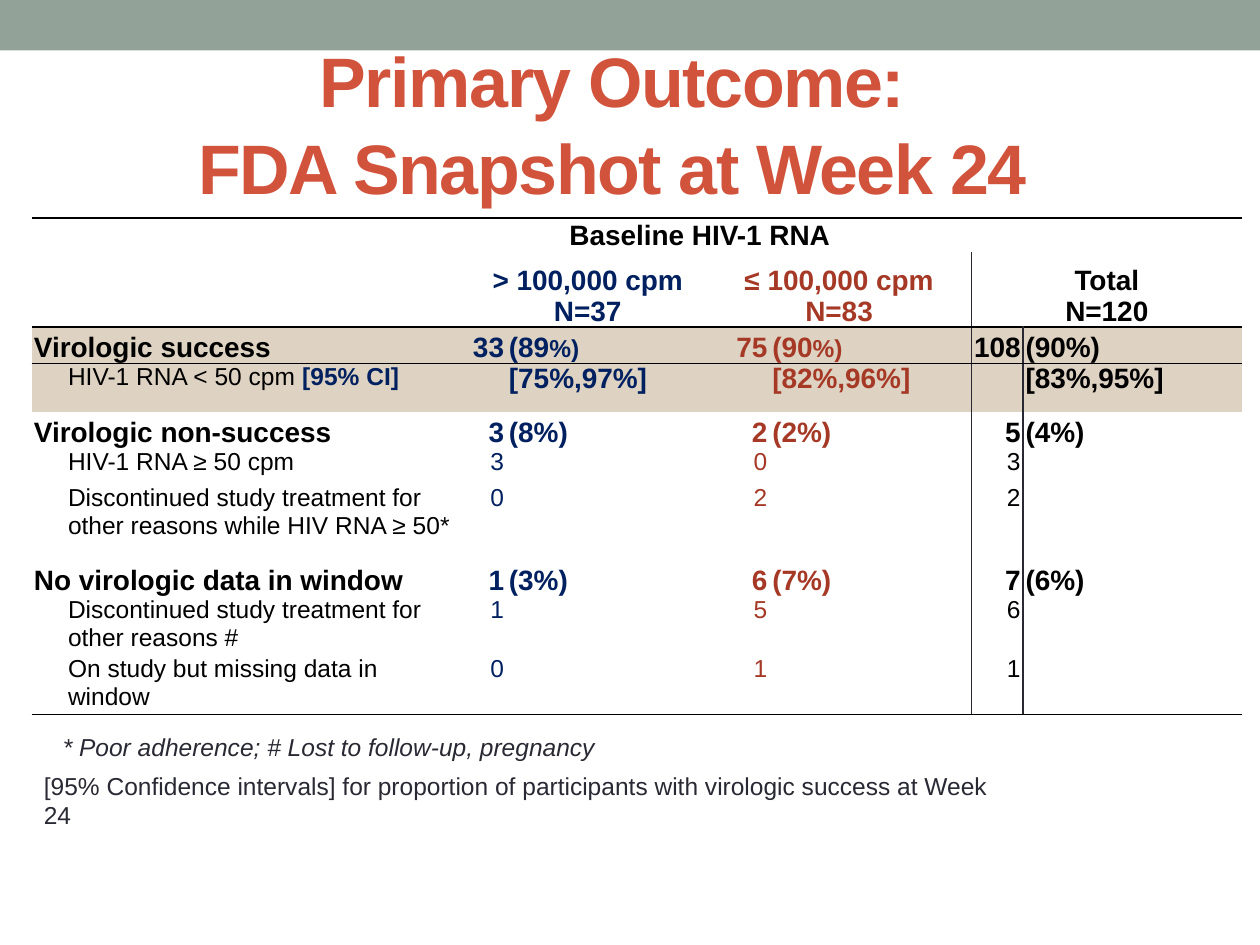
from lxml.etree import SubElement
from pptx import Presentation
from pptx.dml.color import RGBColor
from pptx.enum.shapes import MSO_SHAPE as Shape
from pptx.enum.text import MSO_ANCHOR as Anchor, PP_ALIGN as Align
from pptx.oxml.ns import qn
from pptx.util import Inches, Pt

THEME = {
    "font": "Arial",
    "bar": "93A299", "title": "D2533C", "note": "292934", "rule": "000000", "divider": "292934",
    "plain": "FFFFFF", "shade": "DED2C2", "black": "000000", "high": "002060", "low": "A53926",
    "title_size": 40, "head_size": 16, "body_size": 14,
}
TITLE = "Primary Outcome:\vFDA Snapshot at Week 24"
SPANNER = "Baseline HIV-1 RNA"
GROUPS = [
    ("high", "> 100,000 cpm\vN=37"),
    ("low", "≤ 100,000 cpm\vN=83"),
    ("black", "Total\vN=120"),
]
ROWS = [
    ("main", "Virologic success", [("33", "(89", "%)"), ("75", "(90", "%)"), ("108", "(90%)")]),
    ("interval", "HIV-1 RNA < 50 cpm ", [("", "[75%,97%]"), ("", "[82%,96%]"), ("", "[83%,95%]")]),
    ("main", "Virologic non-success", [("3", "(8%)"), ("2", "(2%)"), ("5", "(4%)")]),
    ("detail", "HIV-1 RNA ≥ 50 cpm", [("3",), ("0",), ("3",)]),
    ("detail", "Discontinued study treatment for other reasons while HIV RNA ≥ 50*",
     [("0",), ("2",), ("2",)]),
    ("main", "No virologic data in window", [("1", "(3%)"), ("6", "(7%)"), ("7", "(6%)")]),
    ("detail", "Discontinued study treatment for other reasons #", [("1",), ("5",), ("6",)]),
    ("detail", "On study but missing data in window", [("0",), ("1",), ("1",)]),
]
NOTES = [
    ((0.25, 6.07, 7.96, 0.34),
     "[95% Confidence intervals] for proportion of participants with virologic success at Week 24",
     False),
    ((0.4, 5.76, 8.17, 0.34), "* Poor adherence; # Lost to follow-up, pregnancy", True),
]
COLUMN_WIDTHS = [3.47, 0.3, 1.59, 0.5, 1.6, 0.41, 1.74]
ROW_HEIGHTS = [0.23, 0.6, 0.29, 0.38, 0.29, 0.29, 0.6, 0.29, 0.29, 0.29]
SHADED_ROWS = (2, 3)
DIVIDER_COLUMN = 5
NO_STYLE = "{2D5ABB26-0587-4C30-8999-92F81FD0307C}"


def add_span(para, text, color, size, **format_values):
    para.add_run()
    span = para.runs[-1]
    if "\v" in text:
        first, text = text.split("\v")
        span.text = first
        para.add_line_break()
        add_span(para, text, color, size, **format_values)
    else:
        span.text = text
    values = {"name": THEME["font"], "size": Pt(THEME[size]), **format_values}
    for name, value in values.items():
        setattr(span.font, name, value)
    span.font.color.rgb = RGBColor.from_string(THEME[color])


def add_box(page, place):
    box = page.shapes.add_textbox(*map(Inches, place))
    box.text_frame.word_wrap = True
    return box.text_frame


def add_borders(cell, row, column):
    sides = {}
    if row >= 1 and column == DIVIDER_COLUMN:
        sides["lnL"] = "divider"
    merged_edge = row == 1 and column == DIVIDER_COLUMN - 2
    if row >= 1 and (column == DIVIDER_COLUMN - 1 or merged_edge):
        sides["lnR"] = "divider"
    if row in (0, 2):
        sides["lnT"] = "rule"
    if row in (1, len(ROW_HEIGHTS) - 1):
        sides["lnB"] = "rule"
    properties = cell._tc.get_or_add_tcPr()
    for side, color in sides.items():
        line = SubElement(properties, qn("a:" + side), w=str(Pt(1)))
        fill = SubElement(line, qn("a:solidFill"))
        SubElement(fill, qn("a:srgbClr"), val=THEME[color])


def prepare_cell(cell, row, column):
    bottom = row < 2 or ROWS[row - 2][0] == "main"
    margin = Inches(0.02)
    values = {"margin_left": margin, "margin_right": margin, "margin_top": 0, "margin_bottom": 0,
              "vertical_anchor": Anchor.BOTTOM if bottom else Anchor.TOP}
    for name, value in values.items():
        setattr(cell, name, value)
    add_borders(cell, row, column)
    cell.fill.solid()
    shade = "shade" if row in SHADED_ROWS else "plain"
    cell.fill.fore_color.rgb = RGBColor.from_string(THEME[shade])
    end = cell.text_frame.paragraphs[0]._p.get_or_add_endParaRPr()
    end.set("sz", str(THEME["body_size"] * 100))


def indent(para, width):
    para._p.get_or_add_pPr().set("marL", str(Inches(width)))


def fill_headers(table):
    table.cell(0, 1).merge(table.cell(0, 6))
    para = table.cell(0, 1).text_frame.paragraphs[0]
    indent(para, 0.78)
    add_span(para, SPANNER, "black", "head_size", bold=True)
    for index, (color, label) in enumerate(GROUPS):
        column = 1 + 2 * index
        table.cell(1, column).merge(table.cell(1, column + 1))
        para = table.cell(1, column).text_frame.paragraphs[0]
        para.alignment = Align.CENTER
        add_span(para, label, color, "head_size", bold=True)


def fill_rows(table):
    for row, (kind, label, groups) in enumerate(ROWS, 2):
        main = kind == "main"
        para = table.cell(row, 0).text_frame.paragraphs[0]
        add_span(para, label, "black", "head_size" if main else "body_size", bold=main)
        if not main:
            indent(para, 0.27)
        if kind == "interval":
            add_span(para, "[95% CI]", "high", "body_size", bold=True)
        strong = kind != "detail"
        size = "head_size" if strong else "body_size"
        for index, (color, _) in enumerate(GROUPS):
            count, *shares = groups[index]
            column = 1 + 2 * index
            if count:
                para = table.cell(row, column).text_frame.paragraphs[0]
                para.alignment = Align.RIGHT
                add_span(para, count, color, size, bold=strong)
            para = table.cell(row, column + 1).text_frame.paragraphs[0]
            for part, text in enumerate(shares):
                add_span(para, text, color, "body_size" if part else size, bold=strong)


def add_outcome_table(page):
    frame = page.shapes.add_table(len(ROW_HEIGHTS), len(COLUMN_WIDTHS), Inches(0.25), Inches(1.73),
                                  Inches(sum(COLUMN_WIDTHS)), Inches(sum(ROW_HEIGHTS)))
    table = frame.table
    table.first_row = table.horz_banding = False
    table._tbl.tblPr.find(qn("a:tableStyleId")).text = NO_STYLE
    for column, width in zip(table.columns, COLUMN_WIDTHS):
        column.width = Inches(width)
    for row, height in zip(table.rows, ROW_HEIGHTS):
        row.height = Inches(height)
    for row in range(len(ROW_HEIGHTS)):
        for column in range(len(COLUMN_WIDTHS)):
            prepare_cell(table.cell(row, column), row, column)
    fill_headers(table)
    fill_rows(table)


def main():
    deck = Presentation()
    deck.slide_width, deck.slide_height = Inches(10), Inches(7.5)
    page = deck.slides.add_slide(deck.slide_layouts[6])

    bar = page.shapes.add_shape(Shape.RECTANGLE, 0, 0, Inches(10), Inches(0.4))
    bar.shadow.inherit = False
    bar.fill.solid()
    bar.fill.fore_color.rgb = RGBColor.from_string(THEME["bar"])
    bar.line.fill.background()

    title = add_box(page, (0, 0.42, 9.72, 1.09))
    title.vertical_anchor = Anchor.MIDDLE
    para = title.paragraphs[0]
    para.alignment = Align.CENTER
    para.line_spacing = 1.04
    add_span(para, TITLE, "title", "title_size", bold=True)
    for span in para.runs:
        span.font._element.set("spc", "-80")

    add_outcome_table(page)
    for place, text, italic in NOTES:
        add_span(add_box(page, place).paragraphs[0], text, "note", "body_size", italic=italic)
    deck.save("out.pptx")


if __name__ == "__main__":
    main()
